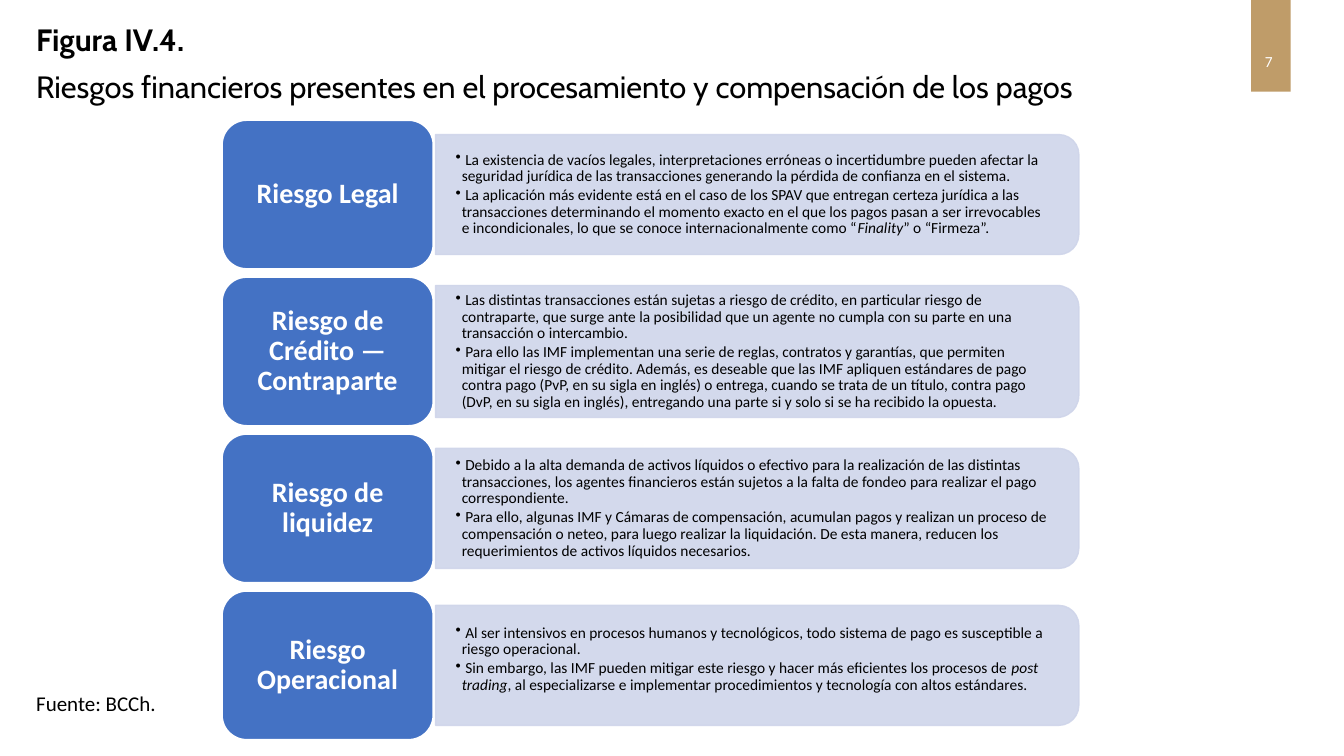
from lxml.etree import SubElement
from pptx import Presentation
from pptx.dml.color import RGBColor
from pptx.enum.shapes import MSO_SHAPE
from pptx.enum.text import MSO_ANCHOR, PP_ALIGN
from pptx.oxml.ns import qn
from pptx.util import Inches, Pt

# Each paragraph is a list of (text, style); style is "", "b" or "i".
PAGE_NUMBER = [[("7", "")]]
HEADING = [
    [("Figura IV.4.", "b")],
    [("Riesgos financieros presentes en el procesamiento y compensación de los pagos", "")],
]
SOURCE = [[("Fuente: BCCh.", "")]]

# Name, panel height, top inset of the panel text, bullets
RISKS = [
    ("Riesgo Legal", 1.19, 0.14, [
        [(" La existencia de vacíos legales, interpretaciones erróneas o incertidumbre pueden "
          "afectar la seguridad jurídica de las transacciones generando la pérdida de confianza "
          "en el sistema.", "")],
        [(" La aplicación más evidente está en el caso de los SPAV que entregan certeza jurídica "
          "a las transacciones determinando el momento exacto en el que los pagos pasan a ser "
          "irrevocables e incondicionales, lo que se conoce internacionalmente como “", ""),
         ("Finality", "i"),
         ("” o “Firmeza”.", "")],
    ]),
    ("Riesgo de Crédito — Contraparte", 1.31, 0.14, [
        [(" Las distintas transacciones están sujetas a riesgo de crédito, en particular riesgo "
          "de contraparte, que surge ante la posibilidad que un agente no cumpla con su parte en "
          "una transacción o intercambio.", "")],
        [(" Para ello las IMF implementan una serie de reglas, contratos y garantías, que "
          "permiten mitigar el riesgo de crédito. Además, es deseable que las IMF apliquen "
          "estándares de pago contra pago (PvP, en su sigla en inglés) o entrega, cuando se "
          "trata de un título, contra pago (DvP, en su sigla en inglés), entregando una parte "
          "si y solo si se ha recibido la opuesta.", "")],
    ]),
    ("Riesgo de liquidez", 1.19, 0.14, [
        [(" Debido a la alta demanda de activos líquidos o efectivo para la realización de las "
          "distintas transacciones, los agentes financieros están sujetos a la falta de fondeo "
          "para realizar el pago correspondiente.", "")],
        [(" Para ello, algunas IMF y Cámaras de compensación, acumulan pagos y realizan un "
          "proceso de compensación o neteo, para luego realizar la liquidación. De esta manera, "
          "reducen los requerimientos de activos líquidos necesarios.", "")],
    ]),
    ("Riesgo Operacional", 1.19, 0.02, [
        [(" Al ser intensivos en procesos humanos y tecnológicos, todo sistema de pago es "
          "susceptible a riesgo operacional.", "")],
        [(" Sin embargo, las IMF pueden mitigar este riesgo y hacer más eficientes los procesos "
          "de ", ""),
         ("post trading", "i"),
         (", al especializarse e implementar procedimientos y tecnología con altos "
          "estándares.", "")],
    ]),
]

THEME = {
    "black": RGBColor(0x00, 0x00, 0x00),
    "white": RGBColor(0xFF, 0xFF, 0xFF),
    "gold": RGBColor(0xBF, 0x9C, 0x69),
    "card": RGBColor(0x44, 0x72, 0xC4),
    "panel": RGBColor(0xCF, 0xD5, 0xEA),
    "heading_font": "Cabin",
    "body_font": "Calibri",
    "heading_size": 22,
    "card_size": 20,
    "source_size": 15,
    "body_size": 11,
}

CARD_LEFT, CARD_TOP, CARD_WIDTH, CARD_HEIGHT = 2.2, 1.19, 2.1, 1.48
ROW_PITCH = 1.557
PANEL_LEFT, PANEL_WIDTH = 4.32, 6.38
PANEL_TEXT_WIDTH, PANEL_TEXT_TRIM = 6.32, 0.12


def write(shape, paragraphs, size, color="black", font="body_font", align=PP_ALIGN.LEFT,
          anchor=MSO_ANCHOR.TOP, insets=(0.1, 0.05, 0.1, 0.05), spacing=1.0, gap=0,
          bullets=False):
    frame = shape.text_frame
    frame.word_wrap = True
    frame.vertical_anchor = anchor
    (frame.margin_left, frame.margin_top,
     frame.margin_right, frame.margin_bottom) = map(Inches, insets)
    for index, runs in enumerate(paragraphs):
        paragraph = frame.add_paragraph() if index else frame.paragraphs[0]
        paragraph.alignment = align
        paragraph.line_spacing = spacing
        if index:
            paragraph.space_before = Pt(gap)
        if bullets:
            properties = paragraph._p.get_or_add_pPr()
            properties.set("marL", str(Inches(0.06)))
            properties.set("indent", str(Inches(-0.06)))
            SubElement(properties, qn("a:buChar"), char="•")
        for text, style in runs:
            run = paragraph.add_run()
            run.text = text
            run.font.name = THEME[font]
            run.font.size = Pt(THEME[size])
            run.font.color.rgb = THEME[color]
            run.font.bold = style == "b"
            run.font.italic = style == "i"


def add_text(slide, box, paragraphs, size, **options):
    write(slide.shapes.add_textbox(*map(Inches, box)), paragraphs, size, **options)


def add_block(slide, kind, box, fill, line=None, line_width=1):
    shape = slide.shapes.add_shape(kind, *map(Inches, box))
    shape.shadow.inherit = False
    shape.fill.solid()
    shape.fill.fore_color.rgb = THEME[fill]
    if line:
        shape.line.color.rgb = THEME[line]
        shape.line.width = Pt(line_width)
    else:
        shape.line.fill.background()
    return shape


def add_risk(slide, row, name, panel_height, top_inset, bullets):
    top = CARD_TOP + row * ROW_PITCH
    middle = top + CARD_HEIGHT / 2

    # The panel is a tall shape turned a quarter, so its sides swap about its centre.
    panel_box = (PANEL_LEFT + (PANEL_WIDTH - panel_height) / 2, middle - PANEL_WIDTH / 2,
                 panel_height, PANEL_WIDTH)
    panel = add_block(slide, MSO_SHAPE.ROUND_2_SAME_RECTANGLE, panel_box, "panel", "panel")
    panel.rotation = 90
    for color in panel._element.spPr.iter(qn("a:srgbClr")):
        SubElement(color, qn("a:alpha"), val="90000")

    text_height = panel_height - PANEL_TEXT_TRIM
    add_text(slide, (PANEL_LEFT, middle - text_height / 2, PANEL_TEXT_WIDTH, text_height),
             bullets, "body_size", anchor=MSO_ANCHOR.MIDDLE,
             insets=(0.2, top_inset, 0.2, 0.14), spacing=0.9, gap=1.65, bullets=True)

    card = add_block(slide, MSO_SHAPE.ROUNDED_RECTANGLE,
                     (CARD_LEFT, top, CARD_WIDTH, CARD_HEIGHT), "card", "white", 1.5)
    write(card, [[(name, "b")]], "card_size", color="white", align=PP_ALIGN.CENTER,
          anchor=MSO_ANCHOR.MIDDLE, insets=(0.08, 0.04, 0.08, 0.04), spacing=0.9)


def main():
    presentation = Presentation()
    presentation.slide_width = Inches(13.33)
    presentation.slide_height = Inches(7.5)
    slide = presentation.slides.add_slide(presentation.slide_layouts[6])

    add_block(slide, MSO_SHAPE.RECTANGLE, (12.41, 0, 0.39, 0.91), "gold")
    add_text(slide, (12.2, 0.47, 0.77, 0.37), PAGE_NUMBER, "body_size", color="white",
             align=PP_ALIGN.CENTER)
    add_text(slide, (0.26, 0.2, 11.14, 0.79), HEADING, "heading_size", font="heading_font",
             spacing=0.9, gap=10)
    add_text(slide, (0.26, 6.8, 1.65, 0.35), SOURCE, "source_size")
    for row, risk in enumerate(RISKS):
        add_risk(slide, row, *risk)

    presentation.save("out.pptx")


if __name__ == "__main__":
    main()
